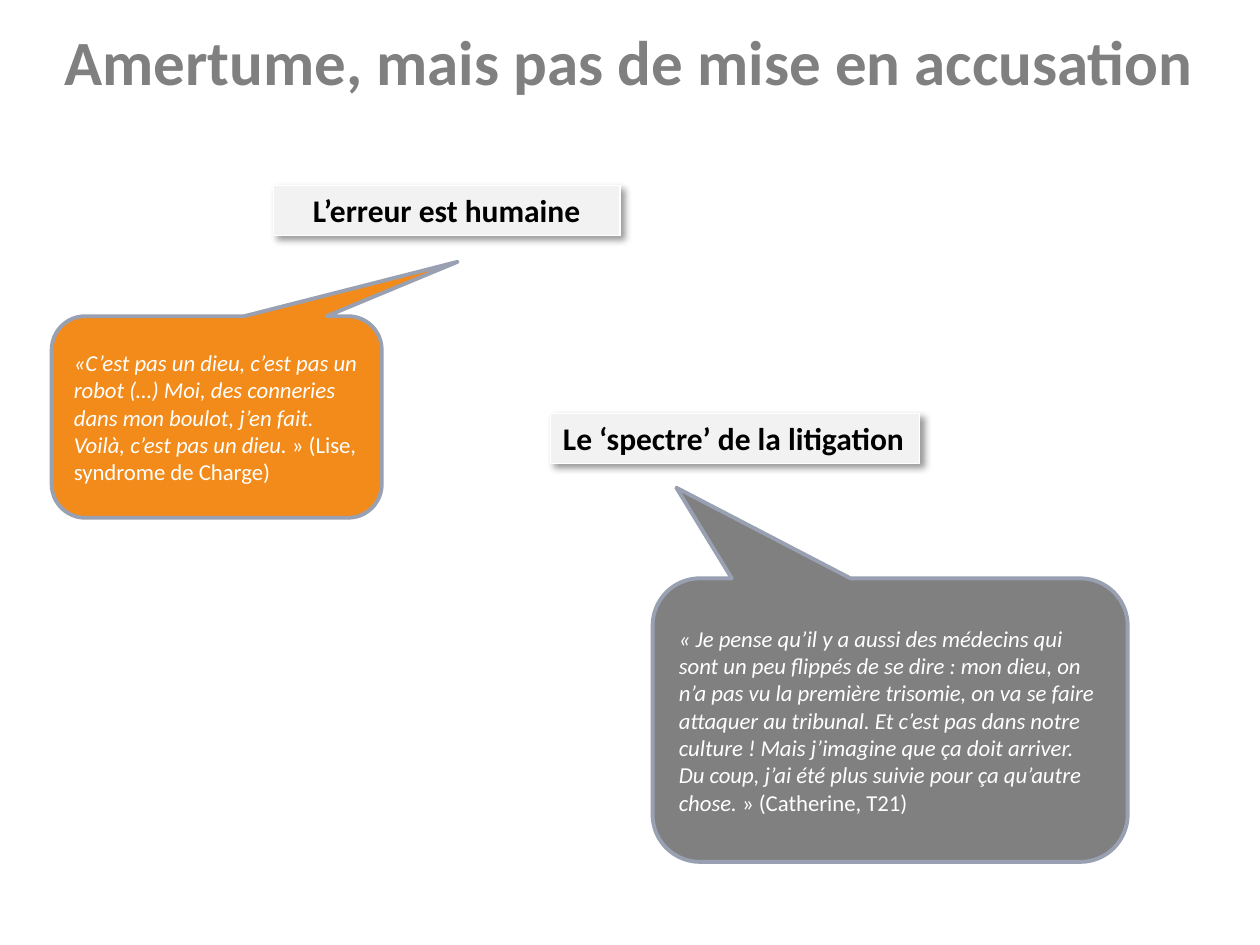
from lxml import etree
from pptx import Presentation
from pptx.dml.color import RGBColor
from pptx.enum import shapes, text
from pptx.oxml import ns
from pptx.util import Inches, Pt

BLACK = RGBColor(0x00, 0x00, 0x00)
WHITE = RGBColor(0xFF, 0xFF, 0xFF)
PALE = RGBColor(0xF2, 0xF2, 0xF2)
GREY = RGBColor(0x80, 0x80, 0x80)
ORANGE = RGBColor(0xF2, 0x8B, 0x1A)
EDGE = RGBColor(0x98, 0xA0, 0xB2)


def add(node, tag, **attrs):
    return etree.SubElement(node, ns.qn(tag), attrs)


def write(para, words, size=13, color=WHITE, bold=False, italic=False):
    run = para.add_run()
    run.text = words
    font = run.font
    font.name, font.size = "Calibri", Pt(size)
    font.bold, font.italic = bold, italic
    font.color.rgb = color
    return run


class Deck:
    """Hold the style and the current slide."""

    def __init__(self):
        self.prs = Presentation()
        self.prs.slide_width, self.prs.slide_height = Inches(10), Inches(7.5)
        self.slide = self.prs.slides.add_slide(self.prs.slide_layouts[5])

    def title(self, words, box):
        shape = self.slide.shapes.title
        shape.left, shape.top, shape.width, shape.height = map(Inches, box)
        frame = shape.text_frame
        frame.vertical_anchor = text.MSO_ANCHOR.TOP
        frame.auto_size = text.MSO_AUTO_SIZE.NONE
        frame.word_wrap = True
        para = frame.paragraphs[0]
        para.alignment = text.PP_ALIGN.LEFT
        run = write(para, words, size=36, color=GREY, bold=True)
        line = etree.Element(ns.qn("a:ln"), w=str(Pt(1.1)))
        add(add(line, "a:solidFill"), "a:srgbClr", val=str(WHITE))
        run.font._element.insert(0, line)

    def block(self, kind, box, fill, edge, width, align, anchor):
        shape = self.slide.shapes.add_shape(kind, *map(Inches, box))
        shape.shadow.inherit = False
        shape.fill.solid()
        shape.fill.fore_color.rgb = fill
        shape.line.color.rgb = edge
        shape.line.width = Pt(width)
        frame = shape.text_frame
        frame.word_wrap = True
        frame.vertical_anchor = anchor
        frame.paragraphs[0].alignment = align
        return shape

    def label(self, words, box, align=text.PP_ALIGN.LEFT, wrap=True):
        shape = self.block(shapes.MSO_SHAPE.RECTANGLE, box, PALE, WHITE, 0.75,
                           align, text.MSO_ANCHOR.TOP)
        frame = shape.text_frame
        frame.word_wrap = wrap
        frame.auto_size = text.MSO_AUTO_SIZE.SHAPE_TO_FIT_TEXT
        write(frame.paragraphs[0], words, size=18, color=BLACK, bold=True)
        effects = shape._element.spPr.find(ns.qn("a:effectLst"))
        shade = add(effects, "a:outerShdw", blurRad=str(Pt(4)), dist=str(Pt(3)),
                    dir=str(45 * 60000), algn="tl", rotWithShape="0")
        tint = add(shade, "a:srgbClr", val=str(BLACK))
        add(tint, "a:alpha", val="40000")

    def quote(self, words, source, box, fill, tip):
        shape = self.block(shapes.MSO_SHAPE.ROUNDED_RECTANGULAR_CALLOUT, box, fill,
                           EDGE, 2.22, text.PP_ALIGN.LEFT, text.MSO_ANCHOR.MIDDLE)
        shape.adjustments[0], shape.adjustments[1] = tip
        para = shape.text_frame.paragraphs[0]
        write(para, words, italic=True)
        write(para, source)


def main():
    deck = Deck()
    deck.label("L’erreur est humaine", (2.17, 1.47, 2.75, 0.4), text.PP_ALIGN.CENTER)
    deck.label("Le ‘spectre’ de la litigation", (4.37, 3.28, 2.93, 0.4), wrap=False)
    deck.title("Amertume, mais pas de mise en accusation", (0.41, 0.13, 9.59, 1.25))
    deck.quote("«C’est pas un dieu, c’est pas un robot (…) Moi, des conneries dans mon "
               "boulot, j’en fait. Voilà, c’est pas un dieu.",
               " » (Lise, syndrome de Charge)",
               (0.41, 2.51, 2.62, 1.6), ORANGE, (0.73, -0.77))
    deck.quote("« Je pense qu’il y a aussi des médecins qui sont un peu flippés de se "
               "dire : mon dieu, on n’a pas vu la première trisomie, on va se faire "
               "attaquer au tribunal. Et c’est pas dans notre culture ! Mais j’imagine "
               "que ça doit arriver. Du coup, j’ai été plus suivie pour ça qu’autre chose.",
               " » (Catherine, T21)",
               (5.18, 4.59, 3.77, 2.25), GREY, (-0.45, -0.82))
    deck.prs.save("out.pptx")


if __name__ == "__main__":
    main()
